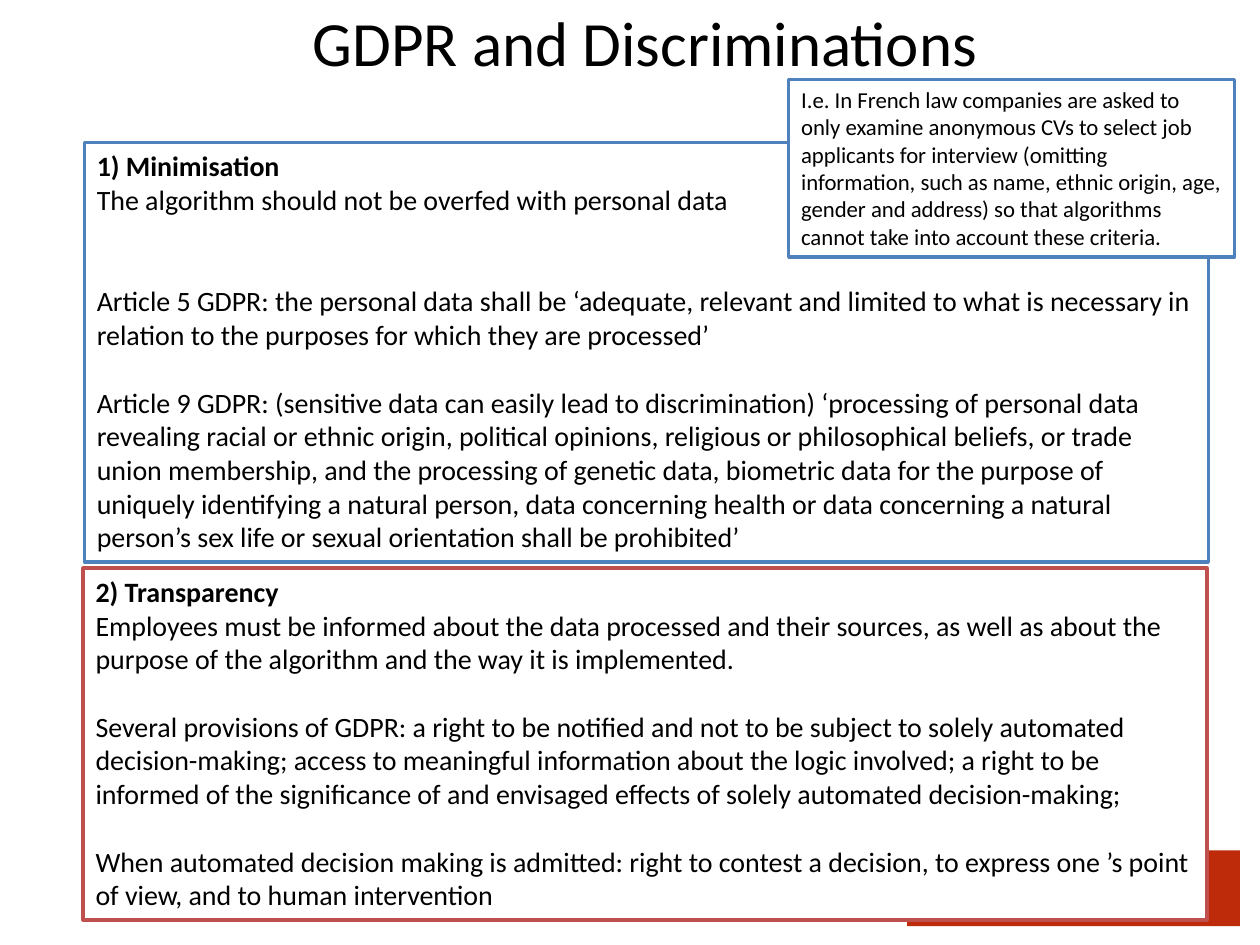
from dataclasses import dataclass

from pptx import Presentation, util as u
from pptx.dml.color import RGBColor
from pptx.enum import shapes, text

WIDE, HIGH = u.Inches(10), u.Inches(7.5)
FONT = "Calibri"
BLUE, RED, BRICK = "4F81BD", "C0504D", "BD2B0B"
LINE = 19.5  # height in points of one line of 16 pt text


@dataclass
class Para:
    words: str
    bold: bool = False
    gap: int = 0  # lines left free above


@dataclass
class Panel:
    area: tuple[float, float, float, float]
    edge: str
    size: int
    paras: list[Para]


def color(code: str) -> RGBColor:
    return RGBColor.from_string(code)


def place(left: float, top: float, width: float, height: float) -> list[int]:
    """Turn percentages of the slide into lengths."""
    pairs = zip((left, top, width, height), (WIDE, HIGH) * 2)
    return [round(part * full / 100) for part, full in pairs]


def write(frame, paras: list[Para], size: int, align) -> None:
    frame.word_wrap = True
    frame.vertical_anchor = text.MSO_ANCHOR.TOP
    for i, item in enumerate(paras):
        para = frame.paragraphs[0] if i == 0 else frame.add_paragraph()
        para.text = item.words
        para.alignment = align
        para.space_before = u.Pt(item.gap * LINE)
        font = para.font
        font.name, font.size, font.bold = FONT, u.Pt(size), item.bold
        font.color.rgb = color("000000")


def block(slide, area: tuple[float, float, float, float], fill: str):
    rect = slide.shapes.add_shape(shapes.MSO_SHAPE.RECTANGLE, *place(*area))
    rect.shadow.inherit = False
    rect.fill.solid()
    rect.fill.fore_color.rgb = color(fill)
    rect.line.fill.background()
    return rect


def draw(slide, panel: Panel) -> None:
    rect = block(slide, panel.area, "FFFFFF")
    rect.line.color.rgb = color(panel.edge)
    rect.line.width = u.Pt(2)
    write(rect.text_frame, panel.paras, panel.size, text.PP_ALIGN.LEFT)
    rect.text_frame.auto_size = text.MSO_AUTO_SIZE.SHAPE_TO_FIT_TEXT


PANELS = [
    Panel((6.7, 15.07, 89.2, 44.4), BLUE, 16, [
        Para("1) Minimisation", bold=True),
        Para("The algorithm should not be overfed with personal data"),
        Para("Article 5 GDPR: the personal data shall be ‘adequate, relevant and "
             "limited to what is necessary in relation to the purposes for which "
             "they are processed’", gap=2),
        Para("Article 9 GDPR: (sensitive data can easily lead to discrimination) "
             "‘processing of personal data revealing racial or ethnic origin, "
             "political opinions, religious or philosophical beliefs, or trade "
             "union membership, and the processing of genetic data, biometric "
             "data for the purpose of uniquely identifying a natural person, data "
             "concerning health or data concerning a natural person’s sex life or "
             "sexual orientation shall be prohibited’", gap=1),
    ]),
    Panel((6.6, 60.13, 89.2, 37.2), RED, 16, [
        Para("2) Transparency", bold=True),
        Para("Employees must be informed about the data processed and their "
             "sources, as well as about the purpose of the algorithm and the way "
             "it is implemented."),
        Para("Several provisions of GDPR: a right to be notified and not to be "
             "subject to solely automated decision-making; access to meaningful "
             "information about the logic involved; a right to be informed of the "
             "significance of and envisaged effects of solely automated "
             "decision-making;", gap=1),
        Para("When automated decision making is admitted: right to contest a "
             "decision, to express one ’s point of view, and to human "
             "intervention", gap=1),
    ]),
    Panel((62.6, 8.4, 35.4, 18.8), BLUE, 13, [
        Para("I.e. In French law companies are asked to only examine anonymous "
             "CVs to select job applicants for interview (omitting information, "
             "such as name, ethnic origin, age, gender and address) so that "
             "algorithms cannot take into account these criteria."),
    ]),
]


def main() -> None:
    deck = Presentation()
    deck.slide_width, deck.slide_height = WIDE, HIGH
    slide = deck.slides.add_slide(deck.slide_layouts[6])
    block(slide, (72, 90, 26.4, 8), BRICK)
    title = slide.shapes.add_textbox(*place(6.6, -0.27, 89.2, 14.4))
    write(title.text_frame, [Para("GDPR and Discriminations")], 36,
          text.PP_ALIGN.CENTER)
    for panel in PANELS:
        draw(slide, panel)
    deck.save("out.pptx")


if __name__ == "__main__":
    main()
